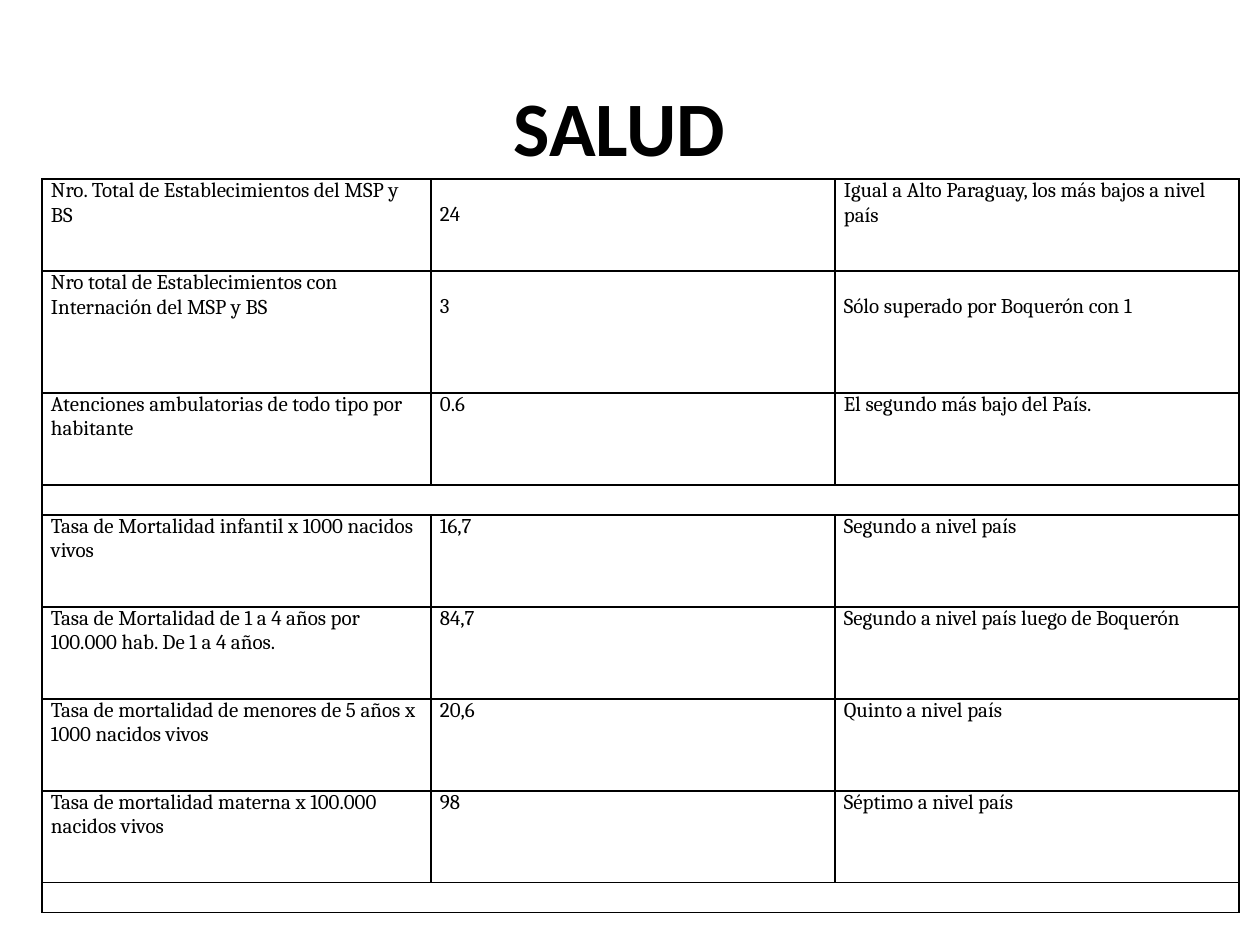
from lxml.etree import SubElement
from pptx import Presentation
from pptx.dml.color import RGBColor
from pptx.enum.text import MSO_ANCHOR, PP_ALIGN
from pptx.oxml import parse_xml
from pptx.oxml.ns import nsdecls, qn
from pptx.util import Pt

PX = 914400 // 126
COLORS = {"ink": "000000", "paper": "FFFFFF"}
LINE_HEIGHT = 24
COLUMN_WIDTHS = (389, 404, 404)
INDICATORS = [
    (92, ("Nro. Total de Establecimientos del MSP y BS", "24",
          "Igual a Alto Paraguay, los más bajos a nivel país"), (1,)),
    (122, ("Nro total de Establecimientos con Internación del MSP y BS", "3",
           "Sólo superado por Boquerón con 1"), (1, 2)),
    (92, ("Atenciones ambulatorias de todo tipo por habitante", "0.6",
          "El segundo más bajo del País."), ()),
    (30, None, ()),
    (92, ("Tasa de Mortalidad infantil x 1000 nacidos vivos", "16,7",
          "Segundo a nivel país"), ()),
    (92, ("Tasa de Mortalidad de 1 a 4 años por 100.000 hab. De 1 a 4 años.", "84,7",
          "Segundo a nivel país luego de Boquerón"), ()),
    (92, ("Tasa de mortalidad de menores de 5 años x 1000 nacidos vivos", "20,6",
          "Quinto a nivel país"), ()),
    (92, ("Tasa de mortalidad materna x 100.000 nacidos vivos", "98",
          "Séptimo a nivel país"), ()),
    (30, None, ()),
]


def add_run(paragraph, text, font, size, bold=False):
    """Append one styled run to a paragraph."""
    run = paragraph.add_run()
    run.text = text
    run.font.name = font
    run.font.size = Pt(size)
    run.font.bold = bold
    run.font.color.rgb = RGBColor.from_string(COLORS["ink"])


def add_title(slide, left, top, width, height):
    """Place the centred heading in its box."""
    heading = slide.shapes.add_textbox(left * PX, top * PX, width * PX, height * PX)
    frame = heading.text_frame
    frame.word_wrap = True
    frame.vertical_anchor = MSO_ANCHOR.MIDDLE
    frame.paragraphs[0].alignment = PP_ALIGN.CENTER
    add_run(frame.paragraphs[0], "SALUD", "Calibri", 44, True)


def style_cell(cell, lowered):
    """Give a cell its margins, plain fill and four thin borders."""
    cell.margin_left = cell.margin_right = 9 * PX
    cell.margin_top = LINE_HEIGHT * PX if lowered else 0
    cell.margin_bottom = 0
    cell.vertical_anchor = MSO_ANCHOR.TOP
    cell.fill.background()
    properties = cell._tc.get_or_add_tcPr()
    for position, side in enumerate(("lnL", "lnR", "lnT", "lnB")):
        properties.insert(position, parse_xml(
            f'<a:{side} {nsdecls("a")} w="{Pt(1)}"><a:solidFill>'
            f'<a:srgbClr val="{COLORS["ink"]}"/></a:solidFill></a:{side}>'))


def add_indicators(slide, left, top):
    """Place the health indicator table from its top left corner."""
    heights = [height for height, _, _ in INDICATORS]
    table = slide.shapes.add_table(
        len(INDICATORS), len(COLUMN_WIDTHS), left * PX, top * PX,
        sum(COLUMN_WIDTHS) * PX, sum(heights) * PX).table
    table.first_row = table.horz_banding = False
    for column, width in zip(table.columns, COLUMN_WIDTHS):
        column.width = width * PX
    for index, (height, texts, lowered) in enumerate(INDICATORS):
        table.rows[index].height = height * PX
        for place in range(len(COLUMN_WIDTHS)):
            cell = table.cell(index, place)
            style_cell(cell, place in lowered)
            paragraph = cell.text_frame.paragraphs[0]
            if texts:
                add_run(paragraph, texts[place], "Cambria", 12)
            else:
                SubElement(paragraph._p, qn("a:endParaRPr"), sz="1200")
        if not texts:
            table.cell(index, 0).merge(table.cell(index, len(COLUMN_WIDTHS) - 1))


def main():
    """Build and save the health slide."""
    deck = Presentation()
    deck.slide_width, deck.slide_height = 1260 * PX, 945 * PX
    slide = deck.slides.add_slide(deck.slide_layouts[6])
    slide.background.fill.solid()
    slide.background.fill.fore_color.rgb = RGBColor.from_string(COLORS["paper"])
    add_title(slide, 84, 42, 1071, 168)
    add_indicators(slide, 42, 179)
    deck.save("out.pptx")


if __name__ == "__main__":
    main()
